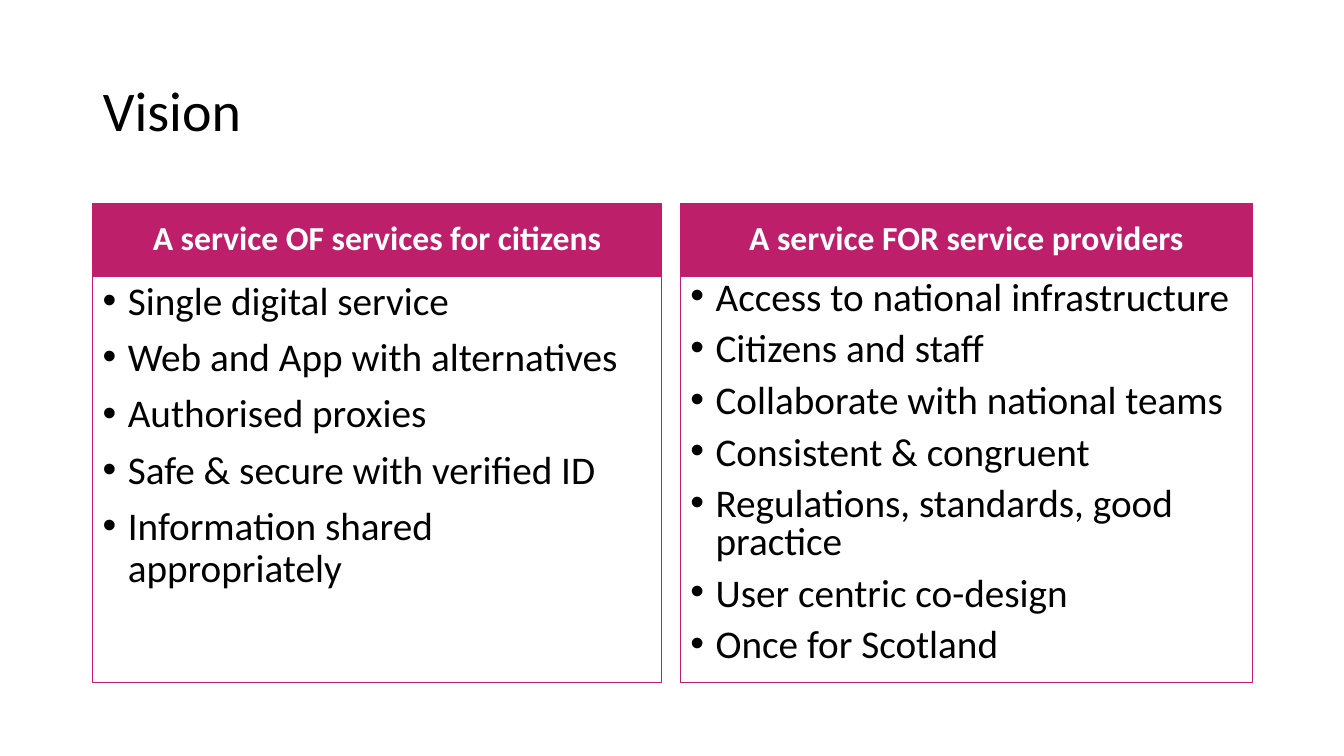
from dataclasses import dataclass

from lxml.etree import SubElement
from pptx import Presentation
from pptx.dml.color import RGBColor
from pptx.enum.shapes import MSO_SHAPE
from pptx.enum.text import MSO_ANCHOR, MSO_AUTO_SIZE, PP_ALIGN
from pptx.oxml.ns import qn
from pptx.util import Emu, Pt

COLOURS = {"magenta": "BE1F6A", "black": "000000", "white": "FFFFFF"}
FONT = "Calibri"
EMU_PER_PX = 9144
HEADER_TOP, HEADER_HEIGHT, BODY_HEIGHT = 202, 72, 403
BULLET_INDENT = 25


@dataclass
class Column:
    left: int
    width: int
    heading: str
    points: list[str]
    line_spacing: float


COLUMNS = [
    Column(92, 564, "A service OF services for citizens", [
        "Single digital service",
        "Web and App with alternatives",
        "Authorised proxies",
        "Safe & secure with verified ID",
        "Information shared appropriately",
    ], 0.9),
    Column(675, 567, "A service FOR service providers", [
        "Access to national infrastructure",
        "Citizens and staff",
        "Collaborate with national teams",
        "Consistent & congruent",
        "Regulations, standards, good practice",
        "User centric co-design",
        "Once for Scotland",
    ], 0.8),
]


def px(length: int) -> Emu:
    return Emu(length * EMU_PER_PX)


def rgb(name: str) -> RGBColor:
    return RGBColor.from_string(COLOURS[name])


def add_text(p, text: str, size: int, colour: str, bold: bool = False) -> None:
    r = p.add_run()
    r.text = text
    r.font.name = FONT
    r.font.size = Pt(size)
    r.font.bold = bold
    r.font.color.rgb = rgb(colour)


def add_bullet(p) -> None:
    pPr = p._p.get_or_add_pPr()
    pPr.set("marL", str(px(BULLET_INDENT)))
    pPr.set("indent", str(-px(BULLET_INDENT)))
    SubElement(pPr, qn("a:buFont")).set("typeface", "Arial")
    SubElement(pPr, qn("a:buChar")).set("char", "•")


def add_box(s, column: Column, top: int, height: int, anchor: MSO_ANCHOR):
    sp = s.shapes.add_shape(MSO_SHAPE.RECTANGLE, px(column.left), px(top),
                            px(column.width), px(height))
    sp.shadow.inherit = False
    sp.fill.background()
    sp.line.color.rgb = rgb("magenta")
    sp.line.width = Pt(0.75)
    sp.text_frame.word_wrap = True
    sp.text_frame.vertical_anchor = anchor
    return sp


def add_column(s, column: Column) -> None:
    header = add_box(s, column, HEADER_TOP, HEADER_HEIGHT, MSO_ANCHOR.MIDDLE)
    header.fill.solid()
    header.fill.fore_color.rgb = rgb("magenta")
    p = header.text_frame.paragraphs[0]
    p.alignment = PP_ALIGN.CENTER
    p.line_spacing = 0.9
    add_text(p, column.heading, 24, "white", bold=True)

    body = add_box(s, column, HEADER_TOP + HEADER_HEIGHT, BODY_HEIGHT, MSO_ANCHOR.TOP)
    tf = body.text_frame
    for i, point in enumerate(column.points):
        p = tf.add_paragraph() if i else tf.paragraphs[0]
        add_bullet(p)
        p.alignment = PP_ALIGN.LEFT
        p.line_spacing = column.line_spacing
        p.space_before = Pt(10 if i else 0)
        add_text(p, point, 28, "black")


def set_title(s, text: str) -> None:
    title = s.shapes.title
    title.left, title.top = px(92), px(40)
    title.width, title.height = px(1150), px(145)
    tf = title.text_frame
    tf.word_wrap = True
    tf.auto_size = MSO_AUTO_SIZE.NONE
    tf.vertical_anchor = MSO_ANCHOR.MIDDLE
    p = tf.paragraphs[0]
    p.alignment = PP_ALIGN.LEFT
    p.line_spacing = 0.9
    add_text(p, text, 40, "black")


def main() -> None:
    prs = Presentation()
    prs.slide_width, prs.slide_height = px(1333), px(750)
    s = prs.slides.add_slide(prs.slide_layouts.get_by_name("Title Only"))
    set_title(s, "Vision")
    for column in COLUMNS:
        add_column(s, column)
    prs.save("out.pptx")


if __name__ == "__main__":
    main()
